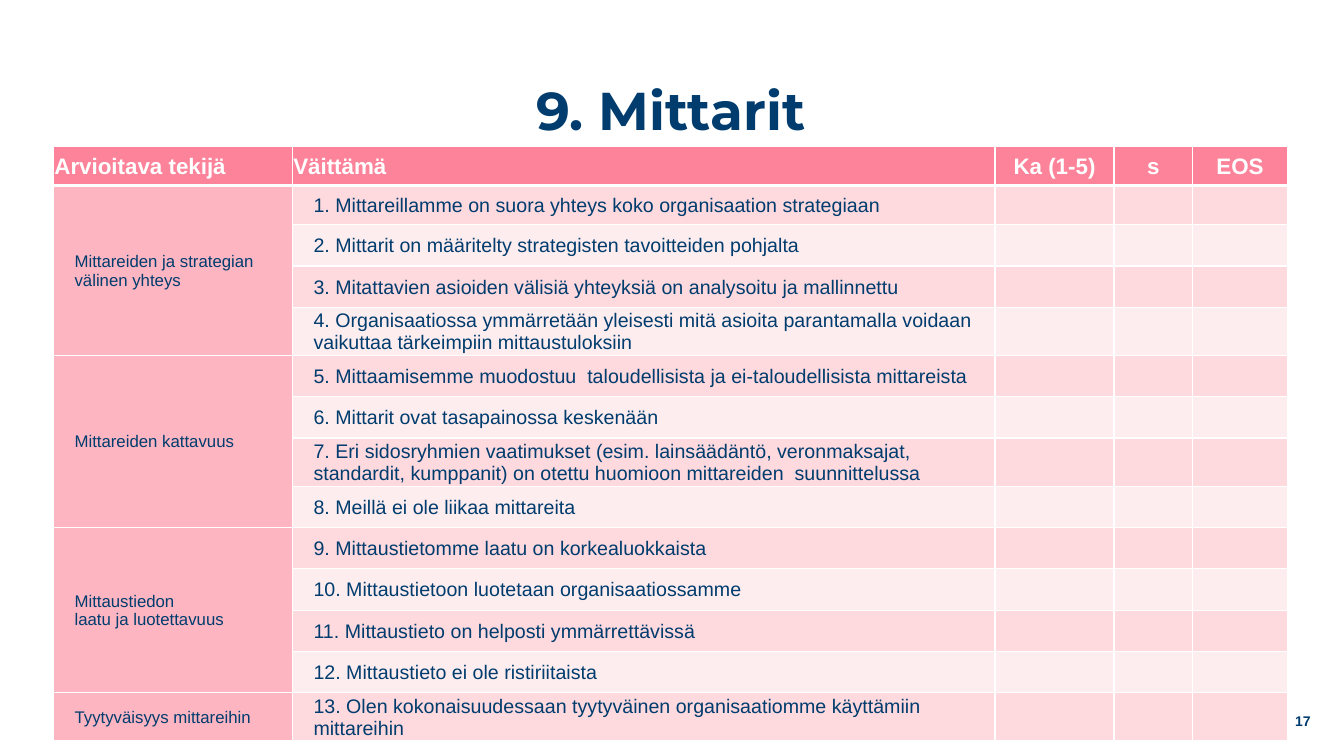
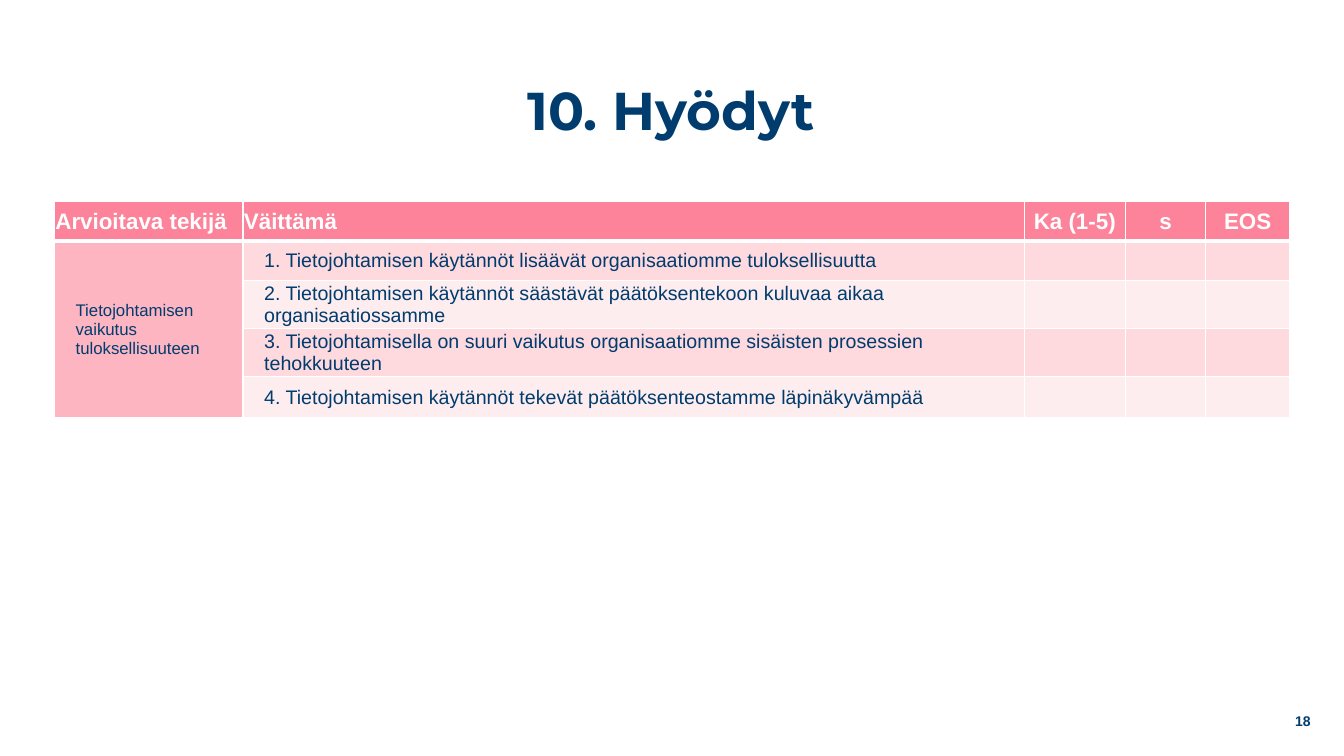
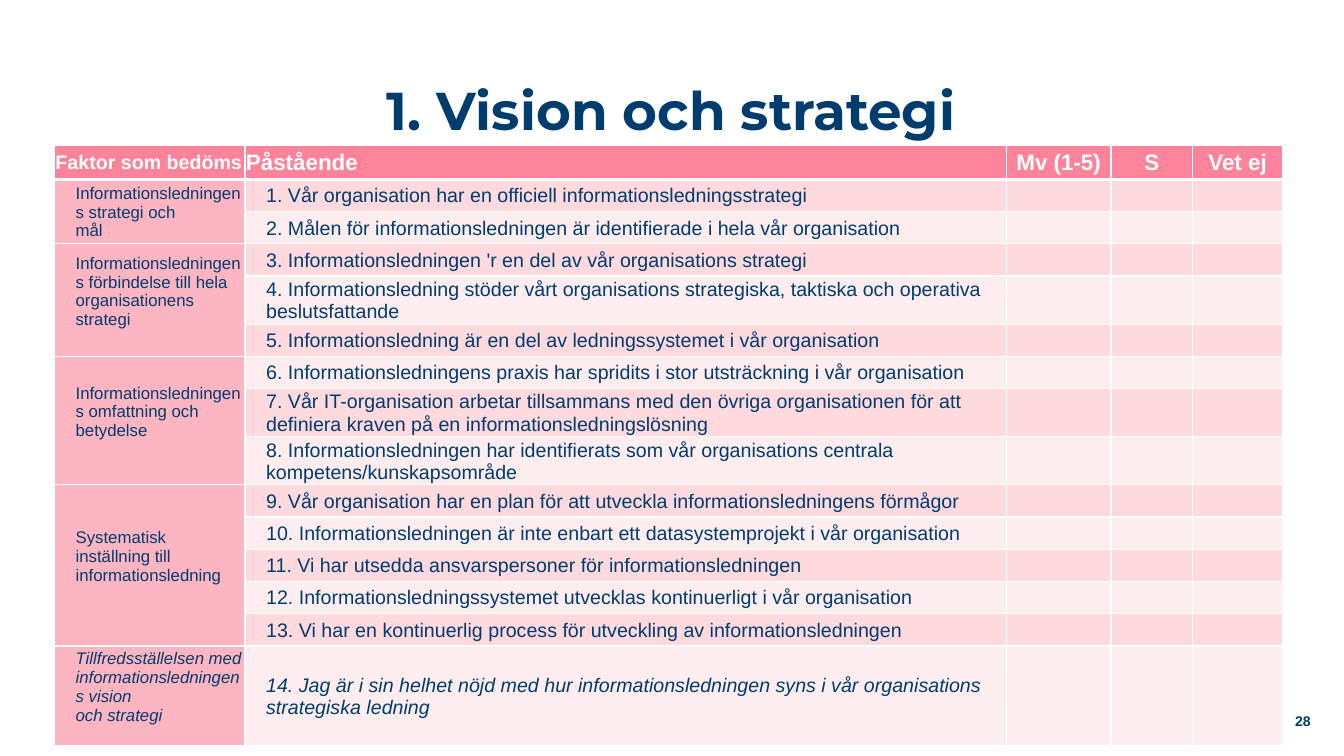
from lxml import etree
from pptx import Presentation
from pptx.dml.color import RGBColor
from pptx.enum import text
from pptx.oxml import ns
from pptx.util import Inches, Pt

NAVY, WHITE = "003C6D", "FFFFFF"
HEADER, FACTOR = "FC8399", "FDB5C2"
STRIPES = ("FED9DE", "FEEDEF")
ALIGN = text.PP_ALIGN


def color(value):
    return RGBColor.from_string(value)


class Survey:
    """Shared style and the current slide."""

    def __init__(self):
        self.deck = Presentation()
        self.deck.slide_width = Inches(13.33)
        self.deck.slide_height = Inches(7.5)
        self.page = None

    def style(self, frame, size, ink=NAVY, bold=False, italic=False,
              align=ALIGN.LEFT, name="Arial"):
        frame.word_wrap = True
        frame.vertical_anchor = text.MSO_ANCHOR.MIDDLE
        for para in frame.paragraphs:
            para.alignment = align
            font = para.font
            font.name, font.size = name, Pt(size)
            font.bold, font.italic = bold, italic
            font.color.rgb = color(ink)

    def add_page(self, title, number):
        self.page = self.deck.slides.add_slide(self.deck.slide_layouts[5])
        holder = self.page.shapes.title
        holder.left, holder.top = Inches(0.97), Inches(0.4)
        holder.width, holder.height = Inches(11.37), Inches(1.45)
        holder.text_frame.text = title
        self.style(holder.text_frame, 38, bold=True, align=ALIGN.CENTER,
                   name="Montserrat")
        holder.text_frame.paragraphs[0].line_spacing = 0.9
        self.add_number(number)

    def add_number(self, number):
        box = self.page.shapes.add_textbox(
            Inches(12.37), Inches(6.95), Inches(0.63), Inches(0.4))
        box.text_frame.text = str(number)
        box.text_frame.margin_right = 0
        self.style(box.text_frame, 10, bold=True, align=ALIGN.RIGHT)

    def border(self, cell, bottom):
        props = cell._tc.get_or_add_tcPr()
        for side, width in zip("LRTB", (1, 1, 1, bottom)):
            line = etree.SubElement(props, ns.qn("a:ln" + side),
                                    w=str(Pt(width)))
            fill = etree.SubElement(line, ns.qn("a:solidFill"))
            etree.SubElement(fill, ns.qn("a:srgbClr"), val=WHITE)

    def fill_cell(self, cell, fill, words="", size=14, indent=0.2,
                  bottom_line=1, **style):
        self.border(cell, bottom_line)
        cell.fill.solid()
        cell.fill.fore_color.rgb = color(fill)
        cell.margin_left = Inches(0.01 + indent)
        cell.margin_right = cell.margin_top = Inches(0.01)
        cell.margin_bottom = 0
        cell.text_frame.text = words
        self.style(cell.text_frame, size, **style)
        cell.vertical_anchor = text.MSO_ANCHOR.MIDDLE

    def add_table(self, left, top, widths, heights, headings, groups,
                  first_size=16, last_italic=False):
        """Each group is (factor, statements, space kept below the factor)."""
        table = self.page.shapes.add_table(
            len(heights), len(widths), Inches(left), Inches(top),
            Inches(sum(widths)), Inches(sum(heights))).table
        for column, width in zip(table.columns, widths):
            column.width = Inches(width)
        for row, height in zip(table.rows, heights):
            row.height = Inches(height)

        # Heading row
        for index, heading in enumerate(headings):
            self.fill_cell(table.cell(0, index), HEADER, heading,
                           16 if index else first_size, indent=0,
                           bottom_line=3, ink=WHITE, bold=True,
                           align=ALIGN.CENTER if index > 1 else ALIGN.LEFT)

        # Factors with their numbered statements
        number = 0
        for factor, statements, space_below in groups:
            first = number + 1
            italic = last_italic and factor == groups[-1][0]
            for statement in statements:
                number += 1
                stripe = STRIPES[(number - 1) % 2]
                self.fill_cell(table.cell(number, 0), FACTOR,
                               factor if number == first else "", 12,
                               italic=italic)
                self.fill_cell(table.cell(number, 1), stripe,
                               f"{number}. {statement}", italic=italic)
                for index in range(2, len(widths)):
                    self.fill_cell(table.cell(number, index), stripe)
            head = table.cell(first, 0)
            head.margin_bottom = Inches(space_below)
            if number > first:
                head.merge(table.cell(number, 0))


FINNISH = ["Arvioitava tekijä", "Väittämä", "Ka (1-5)", "s", "EOS"]
SWEDISH = ["Faktor som bedöms", "Påstående", "Mv (1-5)", "S", "Vet ej"]

METRICS = [
    ("Mittareiden ja strategian välinen yhteys", [
        "Mittareillamme on suora yhteys koko organisaation strategiaan",
        "Mittarit on määritelty strategisten tavoitteiden pohjalta",
        "Mitattavien asioiden välisiä yhteyksiä on analysoitu ja mallinnettu",
        "Organisaatiossa ymmärretään yleisesti mitä asioita parantamalla "
        "voidaan vaikuttaa tärkeimpiin mittaustuloksiin"], 0),
    ("Mittareiden kattavuus", [
        "Mittaamisemme muodostuu  taloudellisista ja ei-taloudellisista "
        "mittareista",
        "Mittarit ovat tasapainossa keskenään",
        "Eri sidosryhmien vaatimukset (esim. lainsäädäntö, veronmaksajat, "
        "standardit, kumppanit) on otettu huomioon mittareiden  "
        "suunnittelussa",
        "Meillä ei ole liikaa mittareita"], 0),
    ("Mittaustiedon\nlaatu ja luotettavuus", [
        "Mittaustietomme laatu on korkealuokkaista",
        "Mittaustietoon luotetaan organisaatiossamme",
        "Mittaustieto on helposti ymmärrettävissä",
        "Mittaustieto ei ole ristiriitaista"], 0),
    ("Tyytyväisyys mittareihin", [
        "Olen kokonaisuudessaan tyytyväinen organisaatiomme käyttämiin "
        "mittareihin"], 0),
]

BENEFITS = [
    ("Tietojohtamisen\nvaikutus\ntuloksellisuuteen", [
        "Tietojohtamisen käytännöt lisäävät organisaatiomme "
        "tuloksellisuutta",
        "Tietojohtamisen käytännöt säästävät päätöksentekoon kuluvaa aikaa "
        "organisaatiossamme",
        "Tietojohtamisella on suuri vaikutus organisaatiomme sisäisten "
        "prosessien tehokkuuteen",
        "Tietojohtamisen käytännöt tekevät päätöksenteostamme "
        "läpinäkyvämpää"], 0),
]

VISION = [
    ("Informationsledningens strategi och\nmål", [
        "Vår organisation har en officiell informationsledningsstrategi",
        "Målen för informationsledningen är identifierade i hela vår "
        "organisation"], 0),
    ("Informationsledningens förbindelse till hela\n"
     "organisationens strategi", [
        "Informationsledningen 'r en del av vår organisations strategi",
        "Informationsledning stöder vårt organisations strategiska, "
        "taktiska och operativa beslutsfattande",
        "Informationsledning är en del av ledningssystemet i vår "
        "organisation"], 0.18),
    ("Informationsledningens omfattning och betydelse", [
        "Informationsledningens praxis har spridits i stor utsträckning i "
        "vår organisation",
        "Vår IT-organisation arbetar tillsammans med den övriga "
        "organisationen för att definiera kraven på en "
        "informationsledningslösning",
        "Informationsledningen har identifierats som vår organisations "
        "centrala kompetens/kunskapsområde"], 0.18),
    ("Systematisk inställning till informationsledning", [
        "Vår organisation har en plan för att utveckla "
        "informationsledningens förmågor",
        "Informationsledningen är inte enbart ett datasystemprojekt i vår "
        "organisation",
        "Vi har utsedda ansvarspersoner för informationsledningen",
        "Informationsledningssystemet utvecklas kontinuerligt i vår "
        "organisation",
        "Vi har en kontinuerlig process för utveckling av "
        "informationsledningen"], 0.18),
    ("Tillfredsställelsen med informationsledningens vision\n"
     "och strategi", [
        "Jag är i sin helhet nöjd med hur informationsledningen syns i vår "
        "organisations strategiska ledning"], 0.18),
]


def main():
    survey = Survey()

    survey.add_page("9. Mittarit", 17)
    survey.add_table(0.53, 1.45, [2.37, 6.97, 1.18, 0.78, 0.94],
                     [0.39] * 2 + [0.41] * 12, FINNISH, METRICS)

    survey.add_page("10. Hyödyt", 18)
    survey.add_table(0.54, 2, [1.87, 7.75, 1, 0.8, 0.83],
                     [0.39] * 2 + [0.41] * 3, FINNISH, BENEFITS)

    survey.add_page("1. Vision och strategi", 28)
    survey.add_table(0.54, 1.44, [1.89, 7.55, 1.04, 0.81, 0.89],
                     [0.34] + [0.32] * 3 + [0.46] + [0.32] * 2 + [0.46] * 2
                     + [0.32] * 5 + [0.98], SWEDISH, VISION,
                     first_size=14, last_italic=True)

    survey.deck.save("out.pptx")


if __name__ == "__main__":
    main()
